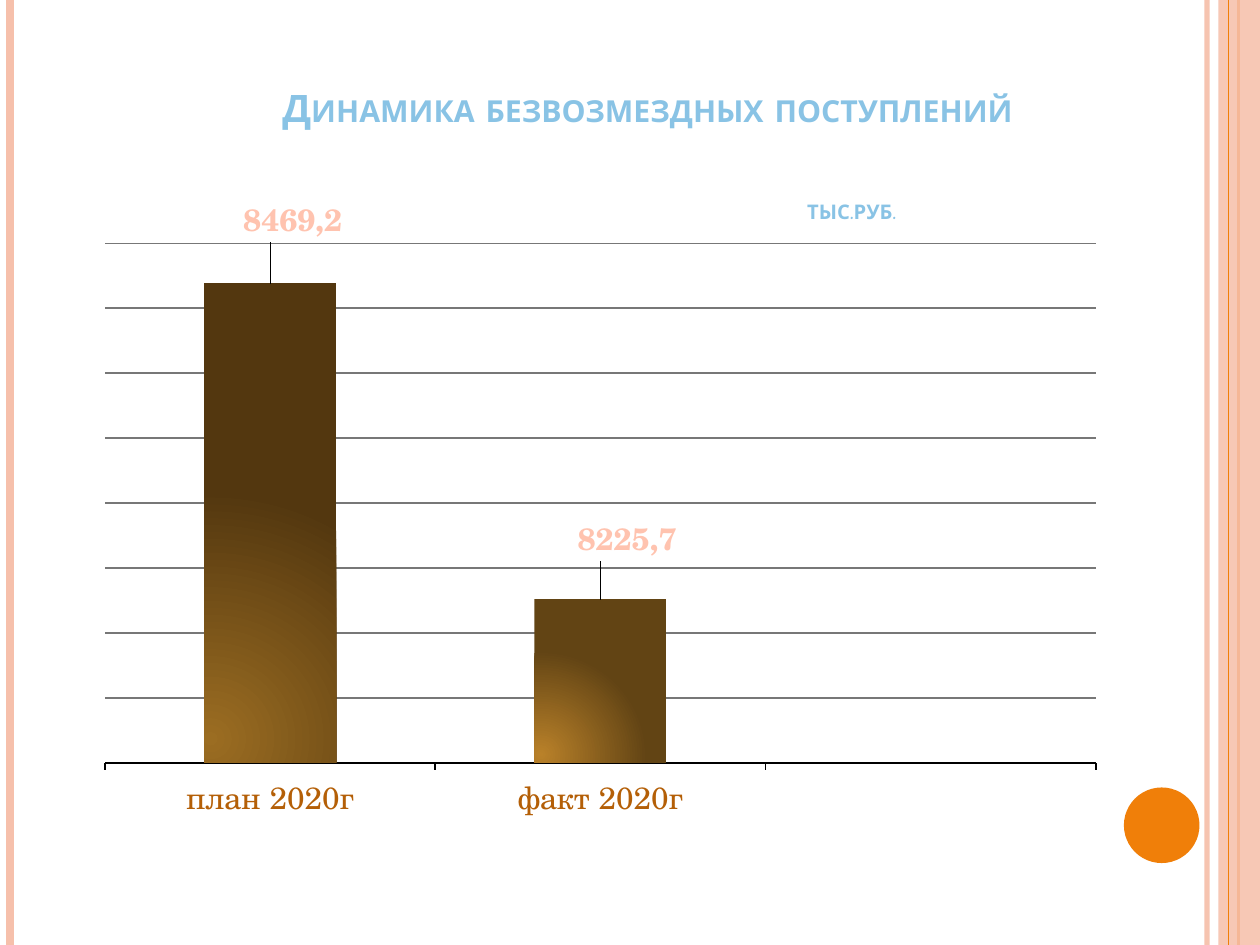
import pptx
import pptx.chart.data
import pptx.dml.color
import pptx.enum.chart
import pptx.enum.shapes
import pptx.enum.text
import pptx.oxml
import pptx.oxml.ns
import pptx.util
from dataclasses import dataclass

Inches = pptx.util.Inches
Pt = pptx.util.Pt
Color = pptx.dml.color.RGBColor.from_string
qn = pptx.oxml.ns.qn


@dataclass(frozen=True)
class Theme:
    heading_font: str = "Comic Neue"
    body_font: str = "TeX Gyre Schola"
    heading: str = "89C3E5"
    accent: str = "F07F09"
    pale: str = "F6C0AB"
    value: str = "FFC3AF"
    category: str = "B45F07"
    grid: str = "777777"
    axis: str = "000000"
    title_size: float = 21.6
    unit_size: float = 14.4
    chart_size: float = 18


theme = Theme()


def add_xml(parent, markup):
    """Append a fragment that may use the a: and c: prefixes."""
    head, tail = markup.split(">", 1)
    closing = "/" if head.endswith("/") else ""
    head = head.rstrip("/")
    node = pptx.oxml.parse_xml(f'{head} {pptx.oxml.ns.nsdecls("a", "c")}{closing}>{tail}')
    parent.append(node)
    return node


def style_font(font, name, size, color, bold=False):
    font.name = name
    font.size = Pt(size)
    font.bold = bold
    font.color.rgb = Color(color)


deck = pptx.Presentation()
deck.slide_width, deck.slide_height = Inches(10), Inches(7.5)
page = deck.slides.add_slide(deck.slide_layouts[5])

# Side decoration from back to front; a zero width marks a stripe with a line weight
shapes = pptx.enum.shapes.MSO_SHAPE
for kind, bounds, color, opacity, weight in (
    ("stripe", (9.58, 0, 9.58, 7.5), theme.pale, 93, 3),
    ("stripe", (0.08, 0, 0.08, 7.5), theme.pale, 100, 4.5),
    ("stripe", (9.83, 0, 9.83, 7.5), theme.accent, 100, 1.5),
    (shapes.RECTANGLE, (9.67, 0, 0.33, 7.5), theme.pale, 87, 0),
    ("stripe", (9.75, 0, 9.75, 7.5), theme.accent, 100, 0.75),
    (shapes.OVAL, (8.92, 6.25, 0.6, 0.6), theme.accent, 100, 0),
):
    if kind == "stripe":
        item = page.shapes.add_connector(
            pptx.enum.shapes.MSO_CONNECTOR.STRAIGHT, *map(Inches, bounds))
        item.line.width = Pt(weight)
        paint = item.line.fill
        add_xml(item._element.spPr, "<a:effectLst/>")
    else:
        item = page.shapes.add_shape(kind, *map(Inches, bounds))
        item.shadow.inherit = False
        item.line.fill.background()
        paint = item.fill
    paint.solid()
    paint.fore_color.rgb = Color(color)
    if opacity < 100:
        tint = paint._xPr.find(qn("a:solidFill"))[0]
        add_xml(tint, f'<a:alpha val="{opacity * 1000}"/>')

# Title with the unit of measure on its second line
title = page.shapes.title
title.left, title.top, title.width, title.height = map(Inches, (0.83, 1.15, 8.19, 0.7))
frame = title.text_frame
frame.word_wrap = True
frame.auto_size = pptx.enum.text.MSO_AUTO_SIZE.NONE
frame.vertical_anchor = pptx.enum.text.MSO_ANCHOR.BOTTOM
frame.margin_bottom = Inches(0.07)
for number, (words, size, indent, space) in enumerate((
    ("Динамика безвозмездных поступлений", theme.title_size, 0.43, 0),
    ("тыс.руб.", theme.unit_size, 3.67, 36.5),
)):
    para = frame.add_paragraph() if number else frame.paragraphs[0]
    para.alignment = pptx.enum.text.PP_ALIGN.CENTER
    para.space_before = Pt(space)
    para._p.get_or_add_pPr().set("marL", str(Inches(indent)))
    span = para.add_run()
    span.text = words
    style_font(span.font, theme.heading_font, size, theme.heading, bold=True)
    span.font._element.set("cap", "small")

# Chart: the third column place has neither a name nor a value
data = pptx.chart.data.CategoryChartData()
data.categories = ["план 2020г", "факт 2020г"]
data.add_series("Series 1", (8469.2, 8225.7, None))
chart = page.shapes.add_chart(
    pptx.enum.chart.XL_CHART_TYPE.COLUMN_CLUSTERED,
    *map(Inches, (0.67, 1.55, 8.19, 5.04)), data).chart
chart.has_legend = False
chart.has_title = False
style_font(chart.font, theme.body_font, theme.chart_size, theme.axis)

plot_area = chart._chartSpace.chart.plotArea
for old_layout in plot_area.findall(qn("c:layout")):
    plot_area.remove(old_layout)
plot_area.insert(0, add_xml(plot_area, (
    '<c:layout><c:manualLayout><c:layoutTarget val="inner"/>'
    '<c:xMode val="edge"/><c:yMode val="edge"/><c:x val="0.02"/><c:y val="0.053"/>'
    '<c:w val="0.96"/><c:h val="0.838"/></c:manualLayout></c:layout>')))

values = chart.value_axis
values.minimum_scale, values.maximum_scale, values.major_unit = 8100, 8500, 50
values.visible = False
values.has_major_gridlines = True
values.major_gridlines.format.line.color.rgb = Color(theme.grid)
values.major_gridlines.format.line.width = Pt(1)

categories = chart.category_axis
categories.major_tick_mark = pptx.enum.chart.XL_TICK_MARK.OUTSIDE
categories.format.line.color.rgb = Color(theme.axis)
categories.format.line.width = Pt(1)
style_font(categories.tick_labels.font, theme.body_font, theme.chart_size, theme.category)

plot = chart.plots[0]
plot.gap_width = 150
plot.vary_by_categories = False
series = plot.series[0]
labels = series.data_labels
labels.show_value = True
style_font(labels.font, theme.body_font, theme.chart_size, theme.value, bold=True)
for index, (caption, shift_x, shift_y, inner, outer) in enumerate((
    ("8469,2", 0.022, -0.058, "9B6D22", "53370F"),
    ("8225,7", 0.026, -0.053, "B98129", "624414"),
)):
    point = series.points[index]
    add_xml(point.format.fill._xPr, (
        '<a:gradFill><a:gsLst>'
        f'<a:gs pos="0"><a:srgbClr val="{inner}"/></a:gs>'
        f'<a:gs pos="100000"><a:srgbClr val="{outer}"/></a:gs></a:gsLst>'
        '<a:path path="circle"><a:fillToRect l="5000" t="95000" r="95000" b="5000"/>'
        '</a:path></a:gradFill>'))
    label = point.data_label
    span = label.text_frame.paragraphs[0].add_run()
    span.text = caption
    style_font(span.font, theme.body_font, theme.chart_size, theme.value, bold=True)
    label.position = pptx.enum.chart.XL_LABEL_POSITION.OUTSIDE_END
    label_xml = label._dLbl
    label_xml.insert(1, add_xml(label_xml, (
        f'<c:layout><c:manualLayout><c:x val="{shift_x}"/><c:y val="{shift_y}"/>'
        '</c:manualLayout></c:layout>')))

# Moved labels get no leader lines
add_xml(labels._element, (
    '<c:extLst><c:ext uri="{CE6537A1-D6FC-4f65-9D91-7224C49458BB}" '
    'xmlns:c15="http://schemas.microsoft.com/office/drawing/2012/chart">'
    '<c15:showLeaderLines val="0"/></c:ext></c:extLst>'))

deck.save("out.pptx")
